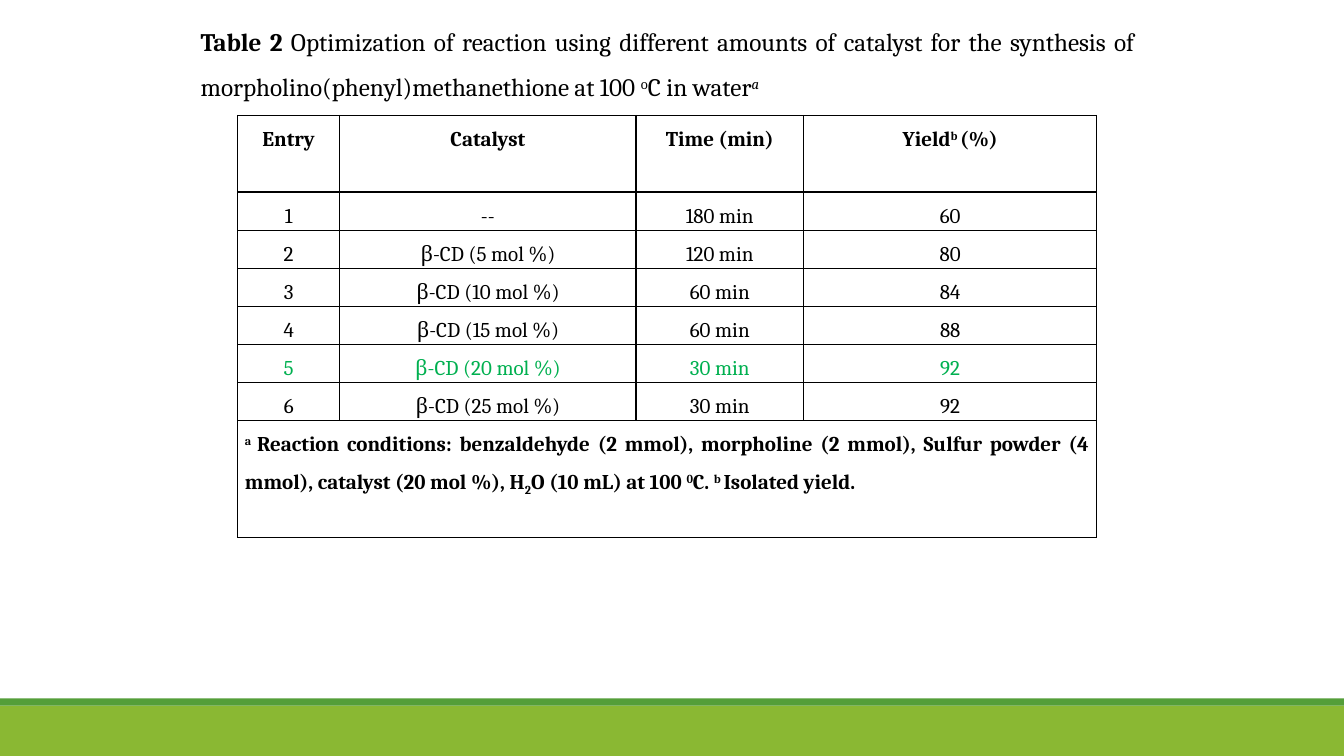
from dataclasses import dataclass

from lxml import etree
from pptx import Presentation
from pptx.dml.color import RGBColor
from pptx.enum.shapes import MSO_SHAPE
from pptx.enum.text import MSO_ANCHOR, MSO_AUTO_SIZE, PP_ALIGN
from pptx.oxml.ns import qn
from pptx.util import Cm, Pt

RECTANGLE = MSO_SHAPE.RECTANGLE
TOP = MSO_ANCHOR.TOP
GROW = MSO_AUTO_SIZE.SHAPE_TO_FIT_TEXT
CENTER, JUSTIFY = PP_ALIGN.CENTER, PP_ALIGN.JUSTIFY
TITLE_ONLY = 5
SUPER, SUB = 30000, -25000


@dataclass(frozen=True)
class Theme:
    font: str = "Cambria"
    text: str = "000000"
    paper: str = "FFFFFF"
    best: str = "00B050"
    band: str = "8AB833"
    stripe: str = "549E39"
    caption_size: int = 18
    gap_size: int = 16
    table_size: int = 15
    rule: int = 1
    header_rule: int = 2


THEME = Theme()

CAPTION = [
    ("Table 2", {"bold": True}),
    (" Optimization of reaction using different amounts of catalyst for the "
     "synthesis of morpholino(phenyl)methanethione", {}),
    (" ", {"size": Pt(THEME.gap_size)}),
    ("at 100 ", {}),
    ("o", {"baseline": SUPER}),
    ("C in water", {}),
    ("a", {"italic": True, "baseline": SUPER}),
]
HEADER = [
    [("Entry", {})],
    [("Catalyst", {})],
    [("Time (min)", {})],
    [("Yield", {}), ("b ", {"baseline": SUPER}), ("(%)", {})],
]
ENTRIES = [
    ("--", 180, 60),
    ("β-CD (5 mol %)", 120, 80),
    ("β-CD (10 mol %)", 60, 84),
    ("β-CD (15 mol %)", 60, 88),
    ("β-CD (20 mol %)", 30, 92),
    ("β-CD (25 mol %)", 30, 92),
]
BEST_ENTRY = 5
FOOTNOTE = [
    ("a ", {"baseline": SUPER}),
    ("Reaction conditions: benzaldehyde (2 mmol), morpholine (2 mmol), "
     "Sulfur powder (4 mmol), catalyst (20 mol %), H", {}),
    ("2", {"baseline": SUB}),
    ("O (10 mL) at 100 ", {}),
    ("0", {"baseline": SUPER}),
    ("C. ", {}),
    ("b ", {"baseline": SUPER}),
    ("Isolated yield.", {}),
]
COLUMN_WIDTHS = [2.57, 7.47, 4.22, 7.39]
HEADER_HEIGHT, ENTRY_HEIGHT, FOOTNOTE_HEIGHT = 1.93, 0.96, 2.95


def apply_format(target, values):
    for name, value in values.items():
        setattr(target, name, value)


def write_paragraph(frame, spans, align, size, color=THEME.text, bold=False):
    """Fill the first paragraph with (text, font values) spans."""
    paragraph = frame.paragraphs[0]
    apply_format(paragraph, {"alignment": align, "line_spacing": 1.5,
                             "space_before": Pt(0), "space_after": Pt(8)})
    base = {"name": THEME.font, "size": Pt(size), "bold": bold}
    for text, changes in spans:
        span = paragraph.add_run()
        span.text = text
        values = {**base, **changes}
        baseline = values.pop("baseline", None)
        apply_format(span.font, values)
        span.font.color.rgb = RGBColor.from_string(color)
        if baseline is not None:
            span.font._element.set("baseline", str(baseline))


def add_bar(slide, top, height, color):
    bar = slide.shapes.add_shape(RECTANGLE, 0, Cm(top), Cm(33.87), Cm(height))
    bar.shadow.inherit = False
    bar.fill.solid()
    bar.fill.fore_color.rgb = RGBColor.from_string(color)
    bar.line.fill.background()


def add_caption(slide):
    title = slide.shapes.title
    apply_format(title, {"left": Cm(4.8), "top": Cm(0.15),
                         "width": Cm(24.05), "height": Cm(2.57)})
    apply_format(title.text_frame, {"word_wrap": True, "auto_size": GROW,
                                    "vertical_anchor": TOP})
    write_paragraph(title.text_frame, CAPTION, JUSTIFY, THEME.caption_size)


def set_borders(cell, bottom):
    properties = cell._tc.get_or_add_tcPr()
    widths = {"L": THEME.rule, "R": THEME.rule, "T": THEME.rule, "B": bottom}
    for side, width in widths.items():
        line = etree.SubElement(properties, qn(f"a:ln{side}"), w=str(Pt(width)))
        fill = etree.SubElement(line, qn("a:solidFill"))
        etree.SubElement(fill, qn("a:srgbClr"), val=THEME.text)


def fill_cell(cell, spans, align=CENTER, bottom=THEME.rule, **text_format):
    apply_format(cell, {"margin_left": Cm(0.18), "margin_right": Cm(0.18),
                        "margin_top": 0, "margin_bottom": 0,
                        "vertical_anchor": TOP})
    set_borders(cell, bottom)
    cell.fill.solid()
    cell.fill.fore_color.rgb = RGBColor.from_string(THEME.paper)
    write_paragraph(cell.text_frame, spans, align, THEME.table_size, **text_format)


def add_results_table(slide):
    heights = [HEADER_HEIGHT, *[ENTRY_HEIGHT] * len(ENTRIES), FOOTNOTE_HEIGHT]
    table = slide.shapes.add_table(
        len(heights), len(COLUMN_WIDTHS), Cm(5.99), Cm(2.91),
        Cm(sum(COLUMN_WIDTHS)), Cm(sum(heights))).table
    apply_format(table, {"first_row": False, "horz_banding": False})
    for column, width in zip(table.columns, COLUMN_WIDTHS):
        column.width = Cm(width)
    for row, height in zip(table.rows, heights):
        row.height = Cm(height)

    for column, spans in enumerate(HEADER):
        fill_cell(table.cell(0, column), spans,
                  bottom=THEME.header_rule, bold=True)
    for entry, (catalyst, minutes, percent) in enumerate(ENTRIES, start=1):
        color = THEME.best if entry == BEST_ENTRY else THEME.text
        values = (str(entry), catalyst, f"{minutes} min", str(percent))
        for column, value in enumerate(values):
            fill_cell(table.cell(entry, column), [(value, {})], color=color)

    last = len(heights) - 1
    note = table.cell(last, 0)
    note.merge(table.cell(last, len(COLUMN_WIDTHS) - 1))
    fill_cell(note, FOOTNOTE, align=JUSTIFY, bold=True)


def main():
    deck = Presentation()
    apply_format(deck, {"slide_width": Cm(33.87), "slide_height": Cm(19.05)})
    slide = deck.slides.add_slide(deck.slide_layouts[TITLE_ONLY])
    add_bar(slide, 17.78, 1.27, THEME.band)
    add_bar(slide, 17.6, 0.18, THEME.stripe)
    add_caption(slide)
    add_results_table(slide)
    deck.save("out.pptx")


if __name__ == "__main__":
    main()
